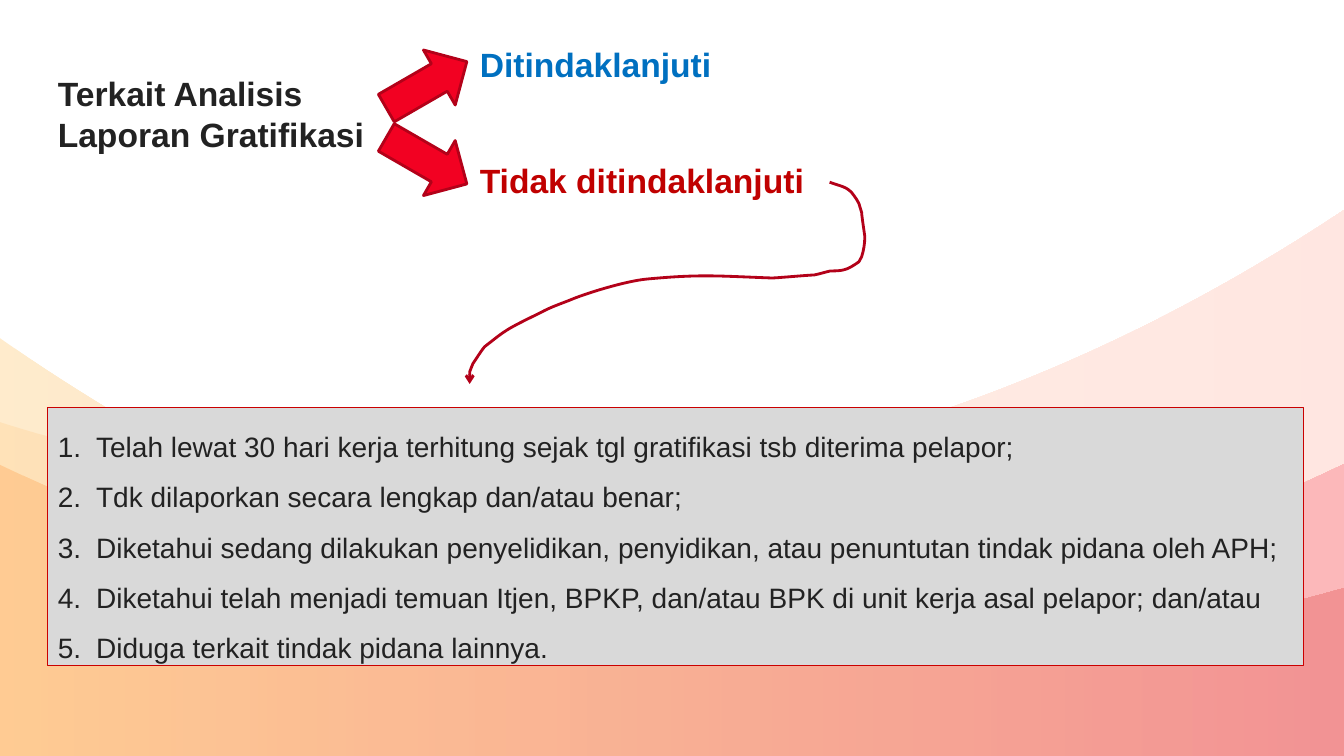
from lxml import etree
from pptx import Presentation
from pptx.dml.color import RGBColor
from pptx.enum.shapes import MSO_SHAPE
from pptx.enum.text import MSO_ANCHOR, MSO_AUTO_SIZE, PP_ALIGN
from pptx.oxml.ns import qn
from pptx.util import Inches, Pt

ARROW = MSO_SHAPE.RIGHT_ARROW
TOP = MSO_ANCHOR.TOP
FIXED = MSO_AUTO_SIZE.NONE
LEFT = PP_ALIGN.LEFT

INK = RGBColor(0x22, 0x22, 0x22)
RED = RGBColor(0xF2, 0x01, 0x22)
WINE = RGBColor(0xB3, 0x01, 0x19)
BLUE = RGBColor(0x00, 0x70, 0xC0)
BRICK = RGBColor(0xC0, 0x00, 0x00)
GREY = RGBColor(0xD9, 0xD9, 0xD9)
EDGE = RGBColor(0xCA, 0x00, 0x00)
PEACH = RGBColor(0xFF, 0xC4, 0x86)
CORAL = RGBColor(0xFF, 0x86, 0x6B)
ORANGE = RGBColor(0xFF, 0x6A, 0x00)
AMBER = RGBColor(0xFF, 0x9F, 0x00)
CRIMSON = RGBColor(0xCC, 0x00, 0x00)

WIDE, HIGH = Inches(13.33), Inches(7.5)

# Each wave: left colour, right colour, Bezier points in percent of the box
WAVES = [
    (PEACH, CORAL, [(0, 55.7), (10.9, 61.9), (22.2, 65.1), (33.8, 65.1),
                    (57.3, 65.1), (79.8, 51.7), (100, 27.7)]),
    (ORANGE, RED, [(0, 61.3), (15.8, 74.8), (32.6, 82.1), (50, 82.1),
                   (67.4, 82.1), (84.3, 74.8), (100, 61.3)]),
    (AMBER, CRIMSON, [(0, 44.5), (21, 70.8), (44.5, 85.5), (69.2, 85.5),
                      (79.7, 85.5), (90, 82.8), (100, 77.7)]),
]
# Bezier points of the trail, in percent of its box
TRAIL = [
    (91.1, 0), (93.6, 2), (95.7, 2), (97.2, 6.5),
    (97.7, 7.5), (98, 9), (98.5, 10.5), (98.7, 12), (99, 13.5), (99.2, 15),
    (99.2, 16.5), (100, 26.5), (100, 27), (100, 30.5), (99.7, 34), (99.2, 37),
    (99, 38), (98.7, 38.5), (98.5, 39.5), (97.4, 41), (95.9, 43), (94.6, 43.5),
    (93.6, 44), (92.3, 44), (91.3, 44), (90.1, 44.5), (88.5, 45.5), (87.2, 46),
    (86, 46), (77.6, 47.5), (76.5, 47.5), (62.5, 46.5), (58.7, 45.5), (44.9, 48),
    (39.3, 49), (28.8, 55.5), (25.3, 58.5), (22.7, 60.5), (20.4, 62), (18.1, 64.5),
    (8.7, 73.5), (9.4, 73), (3.8, 81.5), (3.1, 83), (1.5, 88), (0.8, 90),
    (0.5, 91.5), (0.3, 92.5), (0, 94), (0, 96), (0, 98), (0, 100),
]
REASONS = [
    "Telah lewat 30 hari kerja terhitung sejak tgl gratifikasi tsb diterima pelapor;",
    "Tdk dilaporkan secara lengkap dan/atau benar;",
    "Diketahui sedang dilakukan penyelidikan, penyidikan, atau penuntutan tindak pidana oleh APH;",
    "Diketahui telah menjadi temuan Itjen, BPKP, dan/atau BPK di unit kerja asal pelapor; dan/atau",
    "Diduga terkait tindak pidana lainnya.",
]


def part(box, x, y, w, h):
    """Return the part of a box that the percentages x, y, w, h mark."""
    left, top, wide, high = box
    return (round(left + x * wide / 100), round(top + y * high / 100),
            round(w * wide / 100), round(h * high / 100))


def outline(slide, box, bends, corners=()):
    """Draw Bezier pieces, closed through the corners if there are any."""
    spots = [part(box, x, y, 0, 0)[:2] for x, y in [*bends, *corners]]
    pen = slide.shapes.build_freeform(*spots[0])
    pen.add_line_segments(spots[1:], close=bool(corners))
    shape = pen.convert_to_shape()
    shape.shadow.inherit = False
    # Join every three points into one curve
    steps = list(shape._element.iter(qn("a:lnTo")))[:len(bends) - 1]
    for i in range(0, len(steps), 3):
        bend = etree.Element(qn("a:cubicBezTo"))
        steps[i].addprevious(bend)
        for step in steps[i:i + 3]:
            bend.append(step[0])
            step.getparent().remove(step)
    return shape


def place(shape, box):
    shape.left, shape.top, shape.width, shape.height = box


def style(para, size, color, bold=False):
    para.alignment = LEFT
    for run in para.runs:
        font = run.font
        font.name, font.size, font.bold = "Arial", Pt(size), bold
        font.color.rgb = color


def setup(frame):
    frame.word_wrap = True
    frame.auto_size = FIXED
    frame.vertical_anchor = TOP


def stroke(shape, color, width):
    shape.line.color.rgb = color
    shape.line.width = Pt(width)


def backdrop(slide, box):
    for i, (start, end, bends) in enumerate(WAVES):
        wave = outline(slide, box, bends, [(100, 100), (0, 100)])
        wave.line.fill.background()
        wave.fill.gradient()
        wave.fill.gradient_angle = 0
        for stop, color in zip(wave.fill.gradient_stops, (start, end)):
            stop.color.rgb = color
        # Make each colour 20 % opaque, behind the placeholders
        for tint in wave._element.iter(qn("a:srgbClr")):
            etree.SubElement(tint, qn("a:alpha")).set("val", "20000")
        slide.shapes._spTree.insert(2 + i, wave._element)


def heading(slide, box):
    title = slide.shapes.title
    place(title, box)
    title.text_frame.text = "Terkait Analisis Laporan Gratifikasi"
    setup(title.text_frame)
    style(title.text_frame.paragraphs[0], 24, INK, True)


def fork(slide, box):
    """Two arrows and the two outcomes they lead to."""
    rows = [("Ditindaklanjuti", BLUE, 8.3, -30, 0, 76.9),
            ("Tidak ditindaklanjuti", BRICK, 53.9, 30, 69.7, 83.3)]
    for text, color, y, turn, row, wide in rows:
        arrow = slide.shapes.add_shape(ARROW, *part(box, 0, y, 17.3, 38.2))
        arrow.rotation = turn
        arrow.shadow.inherit = False
        arrow.fill.solid()
        arrow.fill.fore_color.rgb = RED
        stroke(arrow, WINE, 2)
        label = slide.shapes.add_textbox(*part(box, 16.7, row, wide, 30.3))
        label.text_frame.text = text
        setup(label.text_frame)
        style(label.text_frame.paragraphs[0], 24, color, True)


def reasons(slide, box):
    body = slide.placeholders[1]
    place(body, box)
    body.fill.solid()
    body.fill.fore_color.rgb = GREY
    stroke(body, EDGE, .75)
    frame = body.text_frame
    frame.text = "\n".join(REASONS)
    setup(frame)
    for para in frame.paragraphs:
        style(para, 20, INK)
        para.line_spacing = 1.5
        para.space_before = Pt(0)
        props = para._p.get_or_add_pPr()
        props.set("marL", str(Inches(.38)))
        props.set("indent", str(-Inches(.38)))
        mark = etree.SubElement(props, qn("a:buAutoNum"))
        mark.set("type", "arabicPeriod")


def trail(slide, box):
    line = outline(slide, box, TRAIL)
    line.fill.background()
    stroke(line, WINE, 2)
    tip = etree.SubElement(line.line._get_or_add_ln(), qn("a:tailEnd"))
    tip.set("type", "arrow")


def main():
    deck = Presentation()
    deck.slide_width, deck.slide_height = WIDE, HIGH
    slide = deck.slides.add_slide(deck.slide_layouts[1])
    page = (0, 0, WIDE, HIGH)
    backdrop(slide, part(page, -.15, 0, 100.2, 100.1))
    heading(slide, part(page, 3.55, 9, 28.13, 12.1))
    fork(slide, part(page, 28.28, 5.2, 40, 22))
    reasons(slide, part(page, 3.55, 53.9, 93.45, 34.1))
    trail(slide, part(page, 34.95, 24.1, 29.4, 26.7))
    deck.save("out.pptx")


if __name__ == "__main__":
    main()
